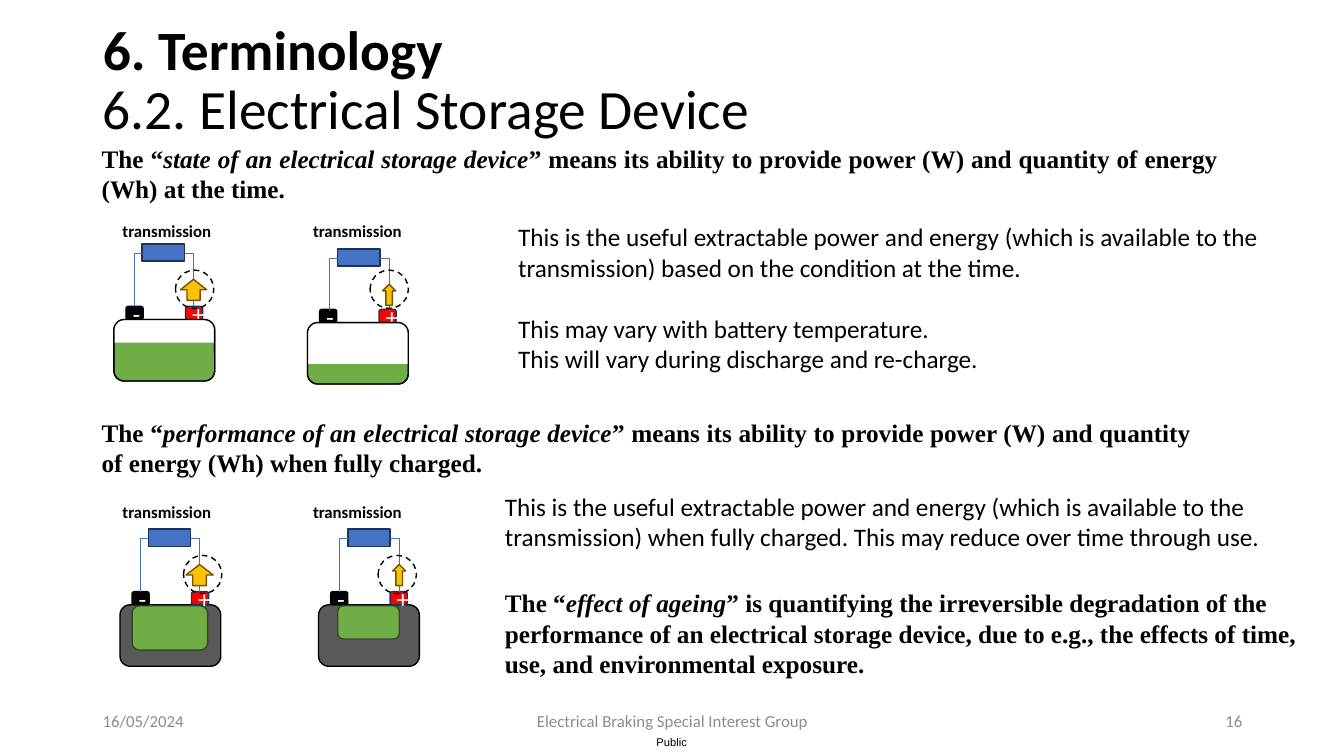
from dataclasses import dataclass

from lxml import etree
from pptx import Presentation
from pptx.dml.color import RGBColor
from pptx.enum import dml, shapes, text
from pptx.oxml.ns import qn
from pptx.util import Inches, Pt

BLACK = RGBColor(0x00, 0x00, 0x00)
WHITE = RGBColor(0xFF, 0xFF, 0xFF)
GREY = RGBColor(0x8C, 0x8C, 0x8C)
CASE_GREY = RGBColor(0x59, 0x59, 0x59)
CHARGE_GREEN = RGBColor(0x70, 0xAD, 0x47)
DARK_GREEN = RGBColor(0x31, 0x4C, 0x1F)
POLE_RED = RGBColor(0xFF, 0x00, 0x00)
CIRCUIT_BLUE = RGBColor(0x44, 0x72, 0xC4)
DARK_BLUE = RGBColor(0x1E, 0x32, 0x56)
POWER_GOLD = RGBColor(0xFF, 0xC0, 0x00)
DARK_GOLD = RGBColor(0x70, 0x54, 0x00)

SERIF = "Times New Roman"
LEFT, CENTER, RIGHT, JUSTIFY = (
    text.PP_ALIGN.LEFT, text.PP_ALIGN.CENTER, text.PP_ALIGN.RIGHT, text.PP_ALIGN.JUSTIFY)
TOP, MIDDLE = text.MSO_ANCHOR.TOP, text.MSO_ANCHOR.MIDDLE
KIND = shapes.MSO_SHAPE
BATTERY_WIDTH, BATTERY_HEIGHT = 1.0, 0.61
RING_SIZE = 0.38


@dataclass(frozen=True)
class Words:
    text: str
    bold: bool = False
    italic: bool = False


@dataclass(frozen=True)
class Style:
    size: float = 18
    font: str = "Calibri"
    color: RGBColor = BLACK
    align: text.PP_ALIGN = LEFT
    space_before: float = 0
    space_after: float = 0


@dataclass(frozen=True)
class Box:
    left: float
    top: float
    width: float
    height: float

    def lengths(self) -> tuple:
        return tuple(Inches(v) for v in (self.left, self.top, self.width, self.height))


@dataclass(frozen=True)
class Capacity:
    indent: float
    width: float
    height: float


@dataclass(frozen=True)
class Storage:
    """A battery, its transmission circuit and the power it delivers."""
    battery: tuple[float, float]
    circuit: tuple[float, float]
    ring: tuple[float, float]
    label: tuple[float, float]
    arrow_width: float
    empty_height: float = 0
    capacity: Capacity | None = None


STORAGES = (
    Storage((1.13, 3.17), (1.41, 2.42), (1.74, 2.68), (0.85, 2.14), 0.26, empty_height=0.23),
    Storage((3.05, 3.2), (3.35, 2.47), (3.67, 2.68), (2.74, 2.14), 0.13, empty_height=0.41),
    Storage((1.19, 6), (1.47, 5.25), (1.82, 5.51), (0.85, 4.93), 0.27,
            capacity=Capacity(0.12, 0.75, 0.44)),
    Storage((3.16, 6), (3.45, 5.25), (3.75, 5.51), (2.74, 4.93), 0.13,
            capacity=Capacity(0.19, 0.61, 0.33)),
)


def write(paragraph, words: list[Words], style: Style) -> None:
    paragraph.alignment = style.align
    paragraph.space_before = Pt(style.space_before)
    paragraph.space_after = Pt(style.space_after)
    for part in words:
        run = paragraph.add_run()
        run.text = part.text
        run.font.size, run.font.name = Pt(style.size), style.font
        run.font.bold, run.font.italic = part.bold, part.italic
        run.font.color.rgb = style.color


def add_text(slide, box: Box, words: list[Words], style: Style, anchor=TOP):
    frame = slide.shapes.add_textbox(*box.lengths()).text_frame
    frame.word_wrap = True
    frame.vertical_anchor = anchor
    write(frame.paragraphs[0], words, style)
    return frame


def define(slide, box: Box, term: str, meaning: str, style: Style):
    """Add a bold definition with its term in quoted italics."""
    return add_text(slide, box, [Words("The “", True), Words(term, True, True),
                                 Words("” " + meaning, True)], style)


def add_part(slide, kind, box: Box, fill: RGBColor | None, line: RGBColor | None):
    part = slide.shapes.add_shape(kind, *box.lengths())
    part.shadow.inherit = False
    if fill is None:
        part.fill.background()
    else:
        part.fill.solid()
        part.fill.fore_color.rgb = fill
    if line is None:
        part.line.fill.background()
    else:
        part.line.color.rgb = line
        part.line.width = Pt(1)
    return part


def add_wire(slide, start: tuple[float, float], end: tuple[float, float]) -> None:
    """Add a wire with one bend, sideways first and then down."""
    wire = slide.shapes.add_connector(
        shapes.MSO_CONNECTOR.ELBOW, *(Inches(v) for v in start + end))
    wire.line.color.rgb = CIRCUIT_BLUE
    wire.line.width = Pt(0.5)
    properties = wire.element.spPr
    properties.find(qn("a:prstGeom")).set("prst", "bentConnector2")
    etree.SubElement(properties, qn("a:effectLst"))


def draw_battery(slide, storage: Storage) -> None:
    left, top = storage.battery
    case = Box(left, top, BATTERY_WIDTH, BATTERY_HEIGHT)
    capacity = storage.capacity
    if capacity:
        add_part(slide, KIND.ROUNDED_RECTANGLE, case, CASE_GREY, BLACK)
        charge = Box(left + capacity.indent, top + 0.01, capacity.width, capacity.height)
    else:
        charge = case
    add_part(slide, KIND.ROUNDED_RECTANGLE, charge, CHARGE_GREEN, DARK_GREEN)
    for sign, offset, fill, line in (("-", 0.12, BLACK, BLACK), ("+", 0.71, POLE_RED, DARK_BLUE)):
        pole = add_part(slide, KIND.ROUNDED_RECTANGLE,
                        Box(left + offset, top - 0.13, 0.17, 0.13), fill, line)
        write(pole.text_frame.paragraphs[0], [Words(sign)], Style(color=WHITE, align=CENTER))
    if storage.empty_height:
        empty = add_part(slide, KIND.ROUNDED_RECTANGLE,
                         Box(left, top, BATTERY_WIDTH, storage.empty_height), WHITE, None)
        empty.adjustments[0] = 0
        add_part(slide, KIND.ROUNDED_RECTANGLE, case, None, BLACK)


def draw_circuit(slide, storage: Storage) -> None:
    left, top = storage.circuit
    width, middle, bottom = 0.42, top + 0.09, top + 0.62
    add_part(slide, KIND.RECTANGLE, Box(left, top, width, 0.17), CIRCUIT_BLUE, DARK_BLUE)
    add_wire(slide, (left, middle), (left - 0.08, bottom))
    add_wire(slide, (left + width, middle), (left + width + 0.09, bottom))
    add_part(slide, KIND.UP_ARROW,
             Box(left + 0.51 - storage.arrow_width / 2, top + 0.35, storage.arrow_width, 0.21),
             POWER_GOLD, DARK_GOLD)
    ring = add_part(slide, KIND.OVAL, Box(*storage.ring, RING_SIZE, RING_SIZE), None, BLACK)
    ring.line.dash_style = dml.MSO_LINE.DASH
    add_text(slide, Box(*storage.label, 1.61, 0.3), [Words("transmission", True)],
             Style(size=12, align=CENTER))


def fill_title(slide) -> None:
    title = slide.shapes.title
    title.left, title.top, title.width, title.height = Box(0.92, 0.17, 11.5, 1.45).lengths()
    frame = title.text_frame
    frame.auto_size = text.MSO_AUTO_SIZE.NONE
    frame.vertical_anchor = TOP
    for paragraph, words in (
            (frame.paragraphs[0], Words("6. Terminology", True)),
            (frame.add_paragraph(), Words("6.2. Electrical Storage Device"))):
        write(paragraph, [words], Style(size=39.6))
        paragraph.line_spacing = 0.9


def add_footer(slide) -> None:
    for left, width, words, align in (
            (0.92, 3, "16/05/2024", LEFT),
            (4.42, 4.5, "Electrical Braking Special Interest Group", CENTER),
            (9.42, 3, "16", RIGHT)):
        add_text(slide, Box(left, 6.95, width, 0.4), [Words(words)],
                 Style(size=12, color=GREY, align=align), MIDDLE)
    marking = add_text(slide, Box(6.51, 7.3, 0.34, 0.13), [Words("Public")],
                       Style(size=8, font="Arial"))
    marking.word_wrap = False
    marking.margin_left = marking.margin_top = marking.margin_right = marking.margin_bottom = 0


def add_explanations(slide) -> None:
    lead = Style(font=SERIF, align=JUSTIFY, space_after=6)
    ability = "means its ability to provide power (W) and quantity of energy (Wh) "
    for box, term, moment in (
            (Box(0.91, 1.37, 12.29, 0.71), "state", "at the time."),
            (Box(0.91, 4.09, 12.02, 0.71), "performance", "when fully charged.")):
        frame = define(slide, box, term + " of an electrical storage device",
                       ability + moment, lead)
        frame.margin_right = Inches(1.12)

    useful = ("This is the useful extractable power and energy "
              "(which is available to the transmission) ")
    state = add_text(slide, Box(5.04, 2.15, 8.02, 1.62),
                     [Words(useful + "based on the condition at the time.")], Style())
    write(state.add_paragraph(), [Words("This may vary with battery temperature.")],
          Style(space_before=22))
    write(state.add_paragraph(), [Words("This will vary during discharge and re-charge.")], Style())
    add_text(slide, Box(4.91, 4.82, 8.17, 0.71),
             [Words(useful + "when fully charged. This may reduce over time through use.")],
             Style())
    define(slide, Box(4.91, 5.78, 8.32, 1.01), "effect of ageing",
           "is quantifying the irreversible degradation of the performance of an electrical "
           "storage device, due to e.g., the effects of time, use, and environmental exposure.",
           Style(font=SERIF))


def main() -> None:
    deck = Presentation()
    deck.slide_width, deck.slide_height = Inches(13.33), Inches(7.5)
    slide = deck.slides.add_slide(deck.slide_layouts.get_by_name("Title Only"))
    fill_title(slide)
    add_footer(slide)
    add_explanations(slide)
    for storage in STORAGES:
        draw_battery(slide, storage)
        draw_circuit(slide, storage)
    deck.save("out.pptx")


if __name__ == "__main__":
    main()
